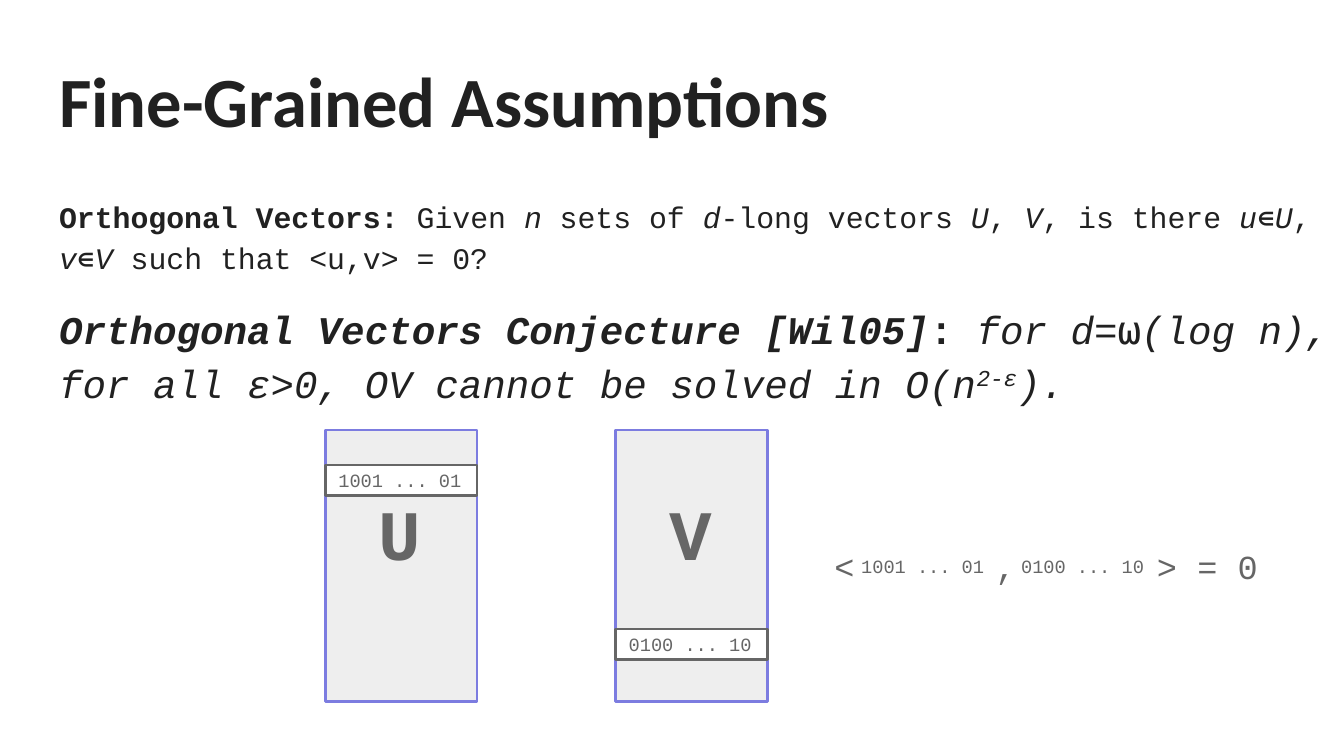
from dataclasses import dataclass

from lxml import etree
from pptx import Presentation
from pptx.dml.color import RGBColor
from pptx.enum.shapes import MSO_SHAPE
from pptx.enum.text import MSO_ANCHOR, MSO_AUTO_SIZE, PP_ALIGN
from pptx.oxml.ns import qn
from pptx.util import Inches, Pt

RECT = MSO_SHAPE.RECTANGLE
TOP, MIDDLE = MSO_ANCHOR.TOP, MSO_ANCHOR.MIDDLE
LEFT = PP_ALIGN.LEFT
NO_FIT = MSO_AUTO_SIZE.NONE

MONO = "Courier New"
INK, GRAY, PANEL, BLUE, WHITE = "212121", "666666", "EEEEEE", "7C7CE0", "FFFFFF"
SET_TOP, SET_W, SET_H, ROW_H = 3.2, 1.13, 2.02, 0.23
PRODUCT_Y = 4.1


@dataclass
class VectorSet:
    name: str
    x: float
    row_y: float
    bits: str
    product_x: float


@dataclass
class Span:
    text: str
    bold: bool = False
    italic: bool = False
    baseline: int = 0


SETS = [
    VectorSet("U", 2.42, 3.46, "1001 ... 01", 6.31),
    VectorSet("V", 4.58, 4.68, "0100 ... 10", 7.5),
]

PROBLEM = [
    Span("Orthogonal Vectors:", bold=True),
    Span(" Given "),
    Span("n", italic=True),
    Span(" sets of "),
    Span("d", italic=True),
    Span("-long vectors "),
    Span("U", italic=True),
    Span(","),
    Span(" V", italic=True),
    Span(", is there "),
    Span("u∊U", italic=True),
    Span(","),
    Span(" v∊V ", italic=True),
    Span("such that <u,v> = 0?"),
]

CONJECTURE = [
    Span("Orthogonal Vectors Conjecture [Wil05]", bold=True, italic=True),
    Span(": ", bold=True),
    Span("for d=⍵(log n), for all ε>0, OV cannot be solved in O(n", italic=True),
    Span("2-ε", italic=True, baseline=30),
    Span(").", italic=True),
]


def rgb(color: str) -> RGBColor:
    return RGBColor.from_string(color)


def place(sp, x: float, y: float, w: float, h: float) -> None:
    sp.left, sp.top, sp.width, sp.height = (Inches(v) for v in (x, y, w, h))


def set_frame(tf, anchor) -> None:
    tf.word_wrap = True
    tf.auto_size = NO_FIT
    tf.vertical_anchor = anchor
    tf.margin_left = tf.margin_right = Inches(0.1)
    tf.margin_top = tf.margin_bottom = Inches(0.1)


def set_font(p, size: float, color: str, name: str = MONO) -> None:
    p.alignment = LEFT
    p.font.name = name
    p.font.size = Pt(size)
    p.font.color.rgb = rgb(color)


def add_box(s, x: float, y: float, h: float, fill: str, line: str) -> None:
    sp = s.shapes.add_shape(RECT, Inches(x), Inches(y), Inches(SET_W), Inches(h))
    sp.shadow.inherit = False
    sp.fill.solid()
    sp.fill.fore_color.rgb = rgb(fill)
    sp.line.color.rgb = rgb(line)
    sp.line.width = Pt(1.5)


def add_text(s, text: str, x: float, y: float, w: float, h: float,
             size: float, anchor=TOP):
    sp = s.shapes.add_textbox(Inches(x), Inches(y), Inches(w), Inches(h))
    set_frame(sp.text_frame, anchor)
    p = sp.text_frame.paragraphs[0]
    p.add_run().text = text
    set_font(p, size, GRAY)
    return p


def add_bits(s, bits: str, x: float, y: float) -> None:
    add_text(s, bits, x, y, SET_W, ROW_H, 10, MIDDLE)


def add_tabs(p, stops: list[float]) -> None:
    tabs = etree.Element(qn("a:tabLst"))
    for stop in stops:
        etree.SubElement(tabs, qn("a:tab"), pos=str(Inches(stop)), algn="l")
    p._p.get_or_add_pPr().insert(0, tabs)


def fill_body_paragraph(p, spans: list[Span], size: float, before: float) -> None:
    set_font(p, size, INK)
    p.line_spacing = 1.15
    p.space_before = Pt(before)
    pPr = p._p.get_or_add_pPr()
    pPr.set("marL", "0")
    pPr.set("indent", "0")
    pPr.find(qn("a:defRPr")).addprevious(etree.Element(qn("a:buNone")))
    for span in spans:
        r = p.add_run()
        r.text = span.text
        r.font.bold = span.bold
        r.font.italic = span.italic
        if span.baseline:
            r._r.get_or_add_rPr().set("baseline", str(span.baseline * 1000))


def add_title(s) -> None:
    title = s.shapes.title
    place(title, 0.34, 0.32, 9.32, 0.88)
    set_frame(title.text_frame, TOP)
    title.text_frame.text = "Fine-Grained Assumptions"
    p = title.text_frame.paragraphs[0]
    set_font(p, 37.8, INK, "Calibri")
    p.font.bold = True


def add_body(s) -> None:
    body = s.placeholders[1]
    place(body, 0.34, 1.34, 9.66, 3.65)
    tf = body.text_frame
    set_frame(tf, TOP)
    fill_body_paragraph(tf.paragraphs[0], PROBLEM, 16, 0)
    fill_body_paragraph(tf.add_paragraph(), CONJECTURE, 21, 12)


def add_set(s, vs: VectorSet) -> None:
    add_box(s, vs.x, SET_TOP, SET_H, PANEL, BLUE)
    add_text(s, vs.name, vs.x + 0.3, 3.54, 0.53, 0.64, 38).font.bold = True
    add_box(s, vs.x, vs.row_y, ROW_H, WHITE, GRAY)
    add_bits(s, vs.bits, vs.x, vs.row_y)
    add_bits(s, vs.bits, vs.product_x, PRODUCT_Y)


def main() -> None:
    prs = Presentation()
    prs.slide_width = Inches(10)
    prs.slide_height = prs.slide_width * 9 // 16
    s = prs.slides.add_slide(prs.slide_layouts[1])
    add_title(s)
    add_body(s)
    for vs in SETS:
        add_set(s, vs)
    product = add_text(s, "<\t,\t> = 0", 6.11, 3.96, 3.35, 0.29, 18)
    add_tabs(product, [1.2, 2.4])
    prs.save("out.pptx")


if __name__ == "__main__":
    main()
